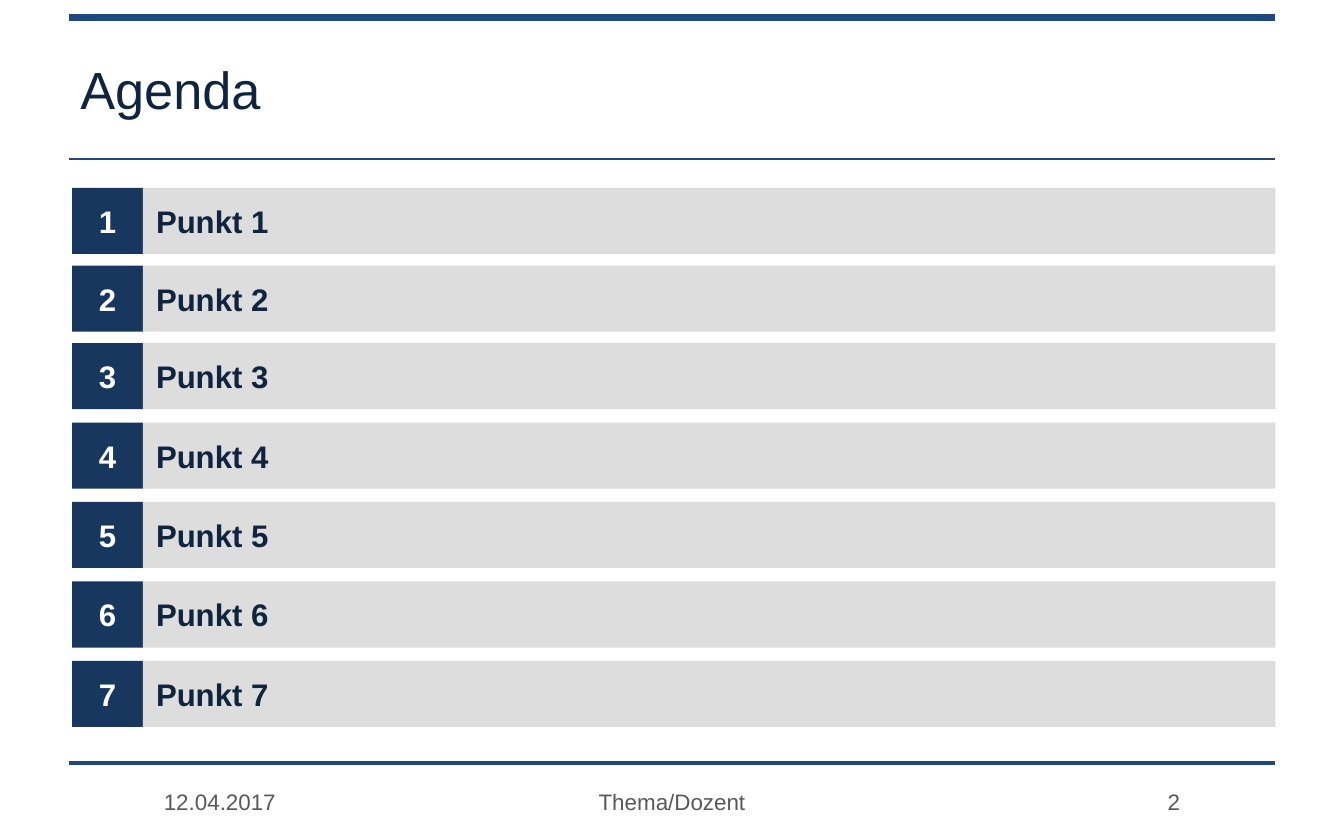
from dataclasses import dataclass

from pptx import Presentation
from pptx.dml.color import RGBColor
from pptx.enum.shapes import MSO_CONNECTOR as CONN, MSO_SHAPE as SHAPE
from pptx.enum.text import MSO_ANCHOR as ANCHOR, PP_ALIGN as ALIGN
from pptx.oxml.ns import qn
from pptx.util import Pt

COLORS = {"rule": "1F497D", "number": "17375E", "bar": "DDDDDD",
          "ink": "0F243E", "white": "FFFFFF", "footer": "595959"}
FONT = "Arial"
LEFT, RIGHT = 36.9, 683.3
NUMBER_X, BAR_X, ROW_H = 38.6, 76.5, 35.4
FOOTER_Y, FOOTER_H = 412.8, 33


@dataclass
class Rule:
    y: float
    weight: float


@dataclass
class AgendaItem:
    number: int
    label: str
    top: float


@dataclass
class FooterField:
    text: str
    left: float
    width: float
    align: ALIGN


RULES = [Rule(9.4, 4), Rule(85, 1), Rule(408.8, 2.5)]
ROW_TOPS = [100.7, 142.3, 183.8, 226.4, 268.9, 311.5, 354]
AGENDA = [AgendaItem(n, f"Punkt {n}", top) for n, top in enumerate(ROW_TOPS, 1)]
FOOTER = [
    FooterField("12.04.2017", 87.8, 129.6, ALIGN.LEFT),
    FooterField("Thema/Dozent", 218.2, 283.7, ALIGN.CENTER),
    FooterField("2", 502.6, 129.6, ALIGN.RIGHT),
]


def rgb(name: str) -> RGBColor:
    """Return the colour stored under a name."""
    return RGBColor.from_string(COLORS[name])


def write(s, text: str, *, size: float, color: str, bold: bool = False,
          align: ALIGN = ALIGN.LEFT, inset: bool = True) -> None:
    """Put one formatted, vertically centred paragraph into a shape."""
    tf = s.text_frame
    tf.word_wrap = True
    tf.vertical_anchor = ANCHOR.MIDDLE
    if not inset:
        tf.margin_left = tf.margin_right = tf.margin_top = tf.margin_bottom = 0
    p = tf.paragraphs[0]
    p.alignment = align
    r = p.add_run()
    r.text = text
    r.font.name = FONT
    r.font.size = Pt(size)
    r.font.bold = bold
    r.font.color.rgb = rgb(color)


def add_rule(sp, rule: Rule) -> None:
    """Draw a horizontal rule across the content width."""
    s = sp.add_connector(CONN.STRAIGHT, Pt(LEFT), Pt(rule.y), Pt(RIGHT), Pt(rule.y))
    s.line.color.rgb = rgb("rule")
    s.line.width = Pt(rule.weight)
    props = s._element.spPr
    props.append(props.makeelement(qn("a:effectLst"), {}))


def add_block(sp, left: float, top: float, width: float, fill: str):
    """Draw a flat rectangle of row height."""
    s = sp.add_shape(SHAPE.RECTANGLE, Pt(left), Pt(top), Pt(width), Pt(ROW_H))
    s.shadow.inherit = False
    s.fill.solid()
    s.fill.fore_color.rgb = rgb(fill)
    s.line.fill.background()
    return s


def add_item(sp, item: AgendaItem) -> None:
    """Draw the number and the bar of an agenda item."""
    number = add_block(sp, NUMBER_X, item.top, BAR_X - NUMBER_X, "number")
    write(number, str(item.number), size=16.7, color="white", bold=True,
          align=ALIGN.CENTER)
    bar = add_block(sp, BAR_X, item.top, RIGHT - BAR_X, "bar")
    write(bar, item.label, size=16.7, color="ink", bold=True)


def add_footer(sp, field: FooterField) -> None:
    """Add a footer field."""
    s = sp.add_textbox(Pt(field.left), Pt(FOOTER_Y), Pt(field.width), Pt(FOOTER_H))
    write(s, field.text, size=12, color="footer", align=field.align, inset=False)


def main() -> None:
    """Build and save the agenda slide."""
    prs = Presentation()
    prs.slide_width, prs.slide_height = Pt(720), Pt(450)
    sp = prs.slides.add_slide(prs.slide_layouts[6]).shapes
    for rule in RULES:
        add_rule(sp, rule)
    title = sp.add_textbox(Pt(36), Pt(9.4), Pt(648), Pt(75.6))
    write(title, "Agenda", size=28, color="ink")
    for item in AGENDA:
        add_item(sp, item)
    for field in FOOTER:
        add_footer(sp, field)
    prs.save("out.pptx")


if __name__ == "__main__":
    main()
